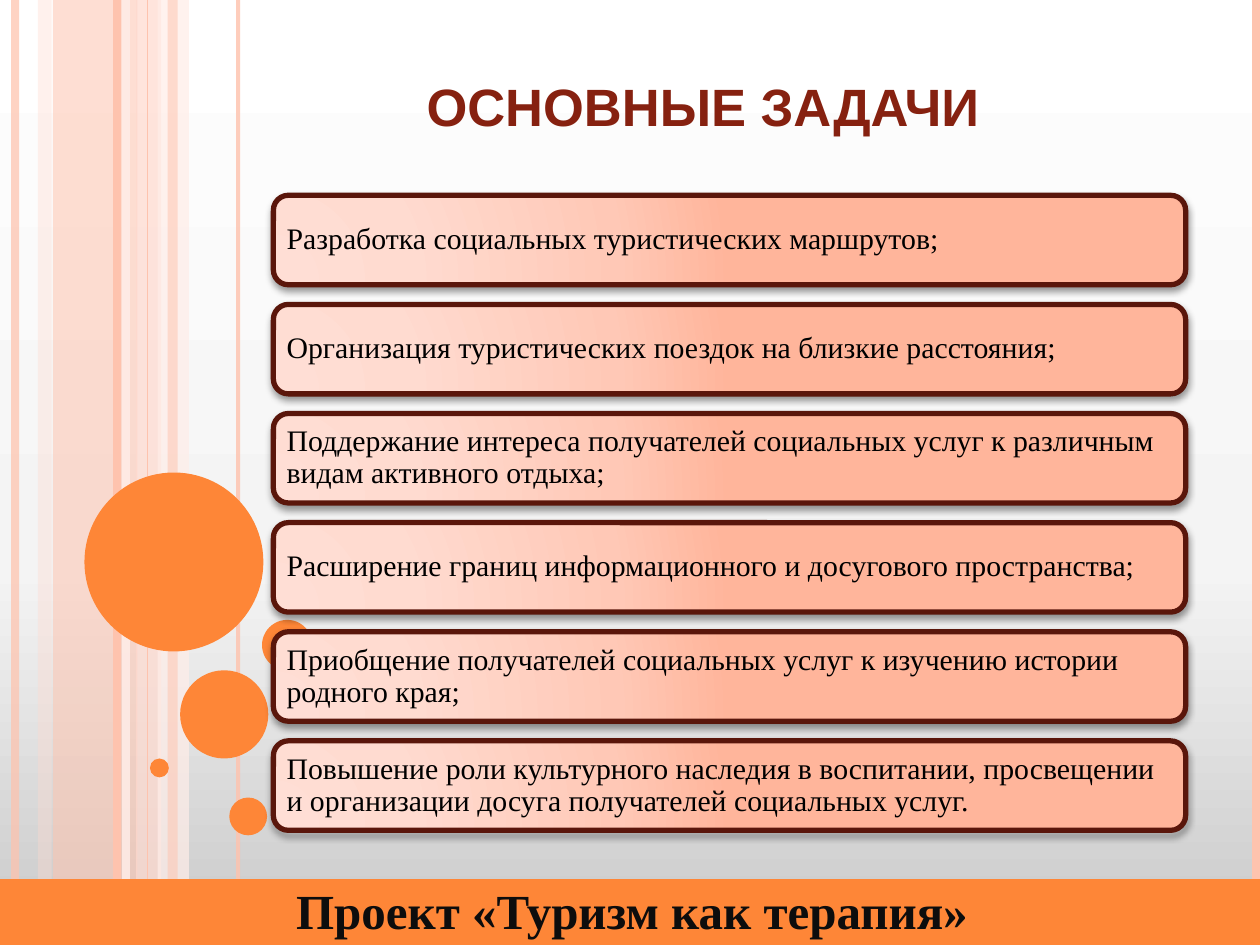
from lxml import etree
from pptx import Presentation
from pptx.dml.color import RGBColor
from pptx.enum.shapes import MSO_CONNECTOR, MSO_SHAPE
from pptx.enum.text import MSO_ANCHOR, MSO_AUTO_SIZE, PP_ALIGN
from pptx.oxml.ns import qn
from pptx.util import Inches, Pt

RECT, OVAL, ROUND = MSO_SHAPE.RECTANGLE, MSO_SHAPE.OVAL, MSO_SHAPE.ROUNDED_RECTANGLE
LINE = MSO_CONNECTOR.STRAIGHT
LEFT, MID = PP_ALIGN.LEFT, PP_ALIGN.CENTER
CENTER = MSO_ANCHOR.MIDDLE
FIXED = MSO_AUTO_SIZE.NONE

WIDE, HIGH = 10, 7.5
ORANGE, PEACH, PINK, PALE = "FE8637", "FEC3AE", "FFD9CE", "FFEDE8"
SERIF = "Times New Roman"
PLAIN = "{2D5ABB26-0587-4C30-8999-92F81FD0307C}"

TITLE = "ОСНОВНЫЕ ЗАДАЧИ"
FOOTER = "Проект «Туризм как терапия»"
TASKS = [
    "Разработка социальных туристических маршрутов;",
    "Организация туристических поездок на близкие расстояния;",
    "Поддержание интереса получателей социальных услуг к различным видам активного отдыха;",
    "Расширение границ информационного и досугового пространства;",
    "Приобщение получателей социальных услуг к изучению истории родного края;",
    "Повышение роли культурного наследия в воспитании, просвещении и организации досуга "
    "получателей социальных услуг.",
]
BANDS = [(0.42, 0.67, PEACH, 54), (0.3, 0.11, PINK, 36),
         (1.08, 0.2, PINK, 70), (1.25, 0.25, PALE, 71)]
RULES = [(0.12, PEACH, 4.5, 73), (1, PALE, 4.5, 83), (0.93, PEACH, 4.5, 100),
         (1.89, PEACH, 2.25, 82), (1.17, PEACH, 0.75, 100), (9.97, PEACH, 4.5, 100)]
STRIPE = (1.33, 0.08, PEACH, 51)
DOTS = [(0.67, 3.75, 1.42), (1.43, 5.32, 0.7), (1.19, 6.02, 0.15),
        (1.82, 6.33, 0.3), (2.08, 4.92, 0.4)]
SKY = [(0, "C9C9C9"), (40, "F4F4F4"), (100, "FFFFFF")]
GLOW = [(0, "FFDED5"), (30, "FFDBD0"), (75, "FFC8B6"), (100, "FFB59B")]
TOP, LAST = 1.55, 5.88
STEP = (LAST - TOP) / (len(TASKS) - 1)


def color(code):
    return RGBColor.from_string(code)


def node(base, tag, **attrs):
    return etree.SubElement(base, qn(tag), {k: str(v) for k, v in attrs.items()})


def fade(base, alpha):
    if alpha < 100:
        node(base.find(".//" + qn("a:srgbClr")), "a:alpha", val=alpha * 1000)


def blend(fill, base, stops):
    fill.gradient()
    grad = base.find(".//" + qn("a:gradFill"))
    for kid in list(grad):
        grad.remove(kid)
    ramp = node(grad, "a:gsLst")
    for pos, code in stops:
        node(node(ramp, "a:gs", pos=pos * 1000), "a:srgbClr", val=code)
    return grad


def write(frame, text, size=17, font=SERIF, ink="000000", bold=False, align=LEFT, space=None):
    par = frame.paragraphs[0]
    par.alignment = align
    par.line_spacing = space
    run = par.add_run()
    run.text = text
    run.font.size, run.font.name, run.font.bold = Pt(size), font, bold
    run.font.color.rgb = color(ink)


def block(kind, *box):
    shape = page.shapes.add_shape(kind, *map(Inches, box))
    shape.shadow.inherit = False
    return shape


def paint(kind, box, code, alpha=100):
    shape = block(kind, *box)
    shape.fill.solid()
    shape.fill.fore_color.rgb = color(code)
    shape.line.fill.background()
    fade(shape.element.spPr, alpha)


def band(left, width, code, alpha):
    paint(RECT, (left, 0, width, HIGH), code, alpha)


def rule(left, code, width, alpha):
    line = page.shapes.add_connector(LINE, Inches(left), 0, Inches(left), Inches(HIGH))
    line.line.color.rgb = color(code)
    line.line.width = Pt(width)
    props = line.element.spPr
    fade(props, alpha)
    node(props, "a:effectLst")


def task(top, text):
    card = block(ROUND, 2.17, top, 7.24, 0.71)
    grad = blend(card.fill, card.element.spPr, GLOW)
    node(node(grad, "a:path", path="circle"), "a:fillToRect", l=5000, t=100000, r=120000, b=10000)
    card.line.color.rgb = color("5A160B")
    card.line.width = Pt(3)
    glow = card.element.spPr.find(qn("a:effectLst"))
    shade = node(glow, "a:outerShdw", blurRad=Pt(4), dist=Pt(2), dir=5400000, rotWithShape=0)
    node(node(shade, "a:srgbClr", val="000000"), "a:alpha", val=40000)
    frame = card.text_frame
    frame.word_wrap = True
    frame.vertical_anchor = CENTER
    frame.margin_left = frame.margin_right = Inches(0.07)
    frame.margin_top = frame.margin_bottom = Inches(0.07)
    write(frame, text, space=0.9)


deck = Presentation()
deck.slide_width, deck.slide_height = Inches(WIDE), Inches(HIGH)
page = deck.slides.add_slide(deck.slide_layouts[5])
grad = blend(page.background.fill, page.element, SKY)
node(grad, "a:lin", ang=16200000, scaled=0)

for item in BANDS:
    band(*item)
for item in RULES:
    rule(*item)
band(*STRIPE)
for left, top, size in DOTS:
    paint(OVAL, (left, top, size, size), ORANGE)

title = page.shapes.title
title.left, title.top, title.width, title.height = map(Inches, (1.38, -0.11, 8.4, 1.89))
title.text_frame.auto_size = FIXED
title.text_frame.vertical_anchor = CENTER
write(title.text_frame, TITLE, size=30, font="Arial", ink="862110", bold=True, align=MID)

for row, text in enumerate(TASKS):
    task(TOP + row * STEP, text)

table = page.shapes.add_table(1, 1, 0, Inches(6.98), Inches(10.03), Inches(0.52)).table
table.first_row = table.horz_banding = False
page.element.find(".//" + qn("a:tableStyleId")).text = PLAIN
cell = table.cell(0, 0)
cell.fill.solid()
cell.fill.fore_color.rgb = color(ORANGE)
cell.vertical_anchor = CENTER
write(cell.text_frame, FOOTER, size=28, ink="0D0D0D", bold=True, align=MID)

deck.save("out.pptx")
